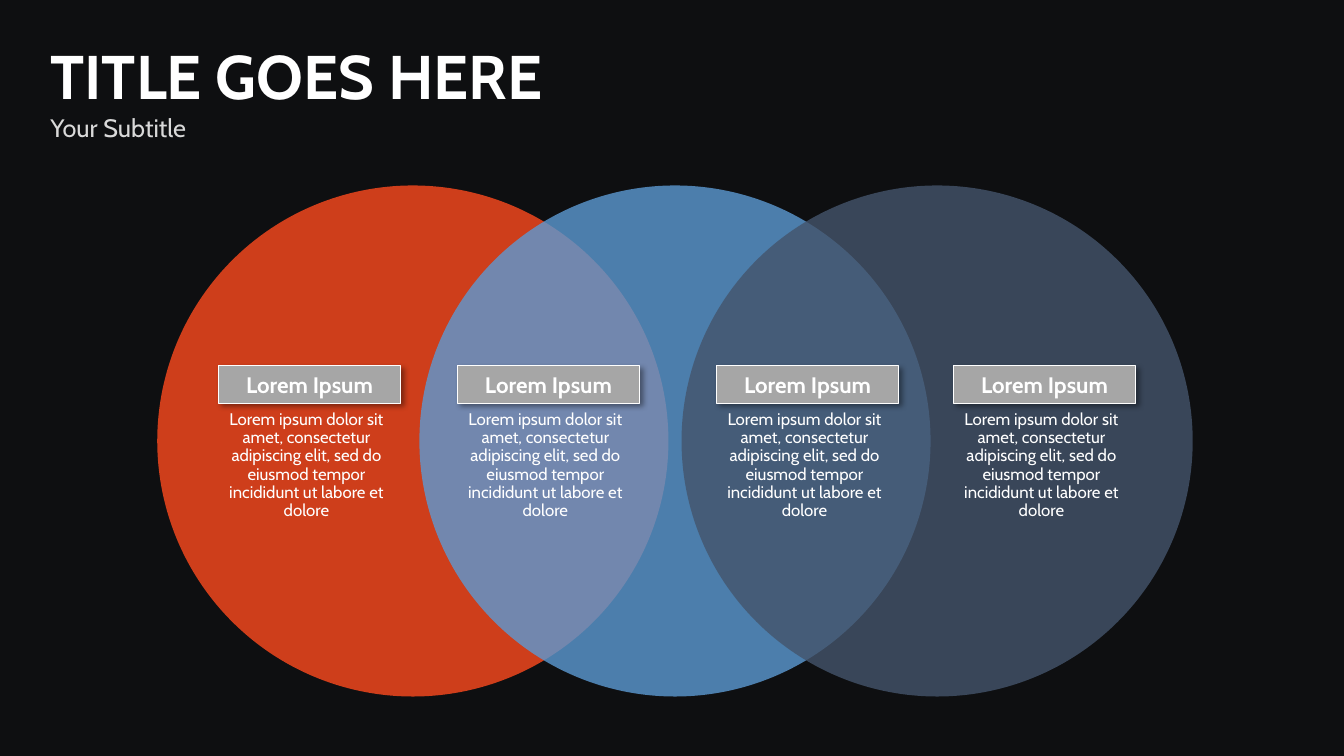
from lxml import etree
from pptx import Presentation
from pptx.dml.color import RGBColor
from pptx.enum import shapes, text
from pptx.oxml import parse_xml
from pptx.oxml.ns import nsdecls, qn
from pptx.util import Inches, Pt

# Content
TITLE, SUBTITLE = "TITLE GOES HERE", "Your Subtitle"
LABEL = "Lorem Ipsum"
BODY = ("Lorem ipsum dolor sit amet, consectetur adipiscing elit, sed do "
        "eiusmod tempor incididunt ut labore et dolore")
NOTES = [(2.17, LABEL, BODY), (4.54, LABEL, BODY),
         (7.11, LABEL, BODY), (9.46, LABEL, BODY)]  # left edge, label, body
CIRCLES = ["FE4A1E", "5C9AD3", "44546B"]

# Layout in inches
SLIDE_W, SLIDE_H = 13.33, 7.5
CIRCLE_LEFT, CIRCLE_TOP, CIRCLE_SIZE, CIRCLE_STEP = 1.56, 1.84, 5.07, 2.6
NOTE_W, LABEL_TOP, LABEL_H = 1.8, 3.63, 0.37
BODY_TOP, BODY_H, BODY_SHIFT = 4.03, 1.2, -0.03
FONT, WHITE = "Cabin", "FFFFFF"


def rgb(value):
    return RGBColor.from_string(value)


def box(left, top, width, height):
    return [Inches(v) for v in (left, top, width, height)]


def write(p, words, size, color=WHITE, bold=False, align=text.PP_ALIGN.CENTER,
          spacing=1.0):
    p.alignment, p.line_spacing = align, spacing
    p.space_before = p.space_after = Pt(0)
    r = p.add_run()
    r.text = words
    r.font.name, r.font.size, r.font.bold = FONT, Pt(size), bold
    r.font.color.rgb = rgb(color)


def add_circle(s, index, color):
    left = CIRCLE_LEFT + index * CIRCLE_STEP
    sp = s.shapes.add_shape(shapes.MSO_SHAPE.OVAL,
                            *box(left, CIRCLE_TOP, CIRCLE_SIZE, CIRCLE_SIZE))
    sp.shadow.inherit = False
    sp.line.fill.background()
    sp.fill.solid()
    sp.fill.fore_color.rgb = rgb(color)
    # 80 % opacity
    clr = sp.fill._xPr.find(qn("a:solidFill")).find(qn("a:srgbClr"))
    etree.SubElement(clr, qn("a:alpha")).set("val", "80000")


def add_shadow(sp):
    sp.shadow.inherit = False
    effects = sp._element.spPr.find(qn("a:effectLst"))
    effects.append(parse_xml(
        f'<a:outerShdw {nsdecls("a")} blurRad="{Pt(4)}" dist="{Pt(3)}" '
        'dir="2700000" algn="tl" rotWithShape="0"><a:srgbClr val="000000">'
        '<a:alpha val="40000"/></a:srgbClr></a:outerShdw>'))


def add_note(s, left, label, body):
    group = s.shapes.add_group_shape()
    # Body text
    tb = group.shapes.add_textbox(*box(left + BODY_SHIFT, BODY_TOP, NOTE_W, BODY_H))
    tb.text_frame.word_wrap = True
    write(tb.text_frame.paragraphs[0], body, 12, spacing=0.9)
    # Label
    sp = group.shapes.add_shape(shapes.MSO_SHAPE.RECTANGLE,
                                *box(left, LABEL_TOP, NOTE_W, LABEL_H))
    sp.fill.solid()
    sp.fill.fore_color.rgb = rgb("A6A6A6")
    sp.line.color.rgb = rgb(WHITE)
    sp.line.width = Pt(0.5)
    add_shadow(sp)
    tf = sp.text_frame
    tf.word_wrap = True
    tf.vertical_anchor = text.MSO_ANCHOR.MIDDLE
    tf.auto_size = text.MSO_AUTO_SIZE.SHAPE_TO_FIT_TEXT
    write(tf.paragraphs[0], label, 16, bold=True)


def add_title(s):
    sp = s.shapes.title
    sp.left, sp.top, sp.width, sp.height = box(0.4, 0.33, 6.5, 1.14)
    tf = sp.text_frame
    tf.word_wrap = True
    tf.vertical_anchor = text.MSO_ANCHOR.TOP
    tf.auto_size = text.MSO_AUTO_SIZE.SHAPE_TO_FIT_TEXT
    left = text.PP_ALIGN.LEFT
    write(tf.paragraphs[0], TITLE, 44, bold=True, align=left)
    write(tf.add_paragraph(), SUBTITLE, 18, "D9D9D9", align=left)


def main():
    prs = Presentation()
    prs.slide_width, prs.slide_height = Inches(SLIDE_W), Inches(SLIDE_H)
    s = prs.slides.add_slide(prs.slide_layouts[5])
    s.background.fill.solid()
    s.background.fill.fore_color.rgb = rgb("0E0F11")
    add_title(s)
    for index, color in enumerate(CIRCLES):
        add_circle(s, index, color)
    for note in NOTES:
        add_note(s, *note)
    prs.save("out.pptx")


if __name__ == "__main__":
    main()
